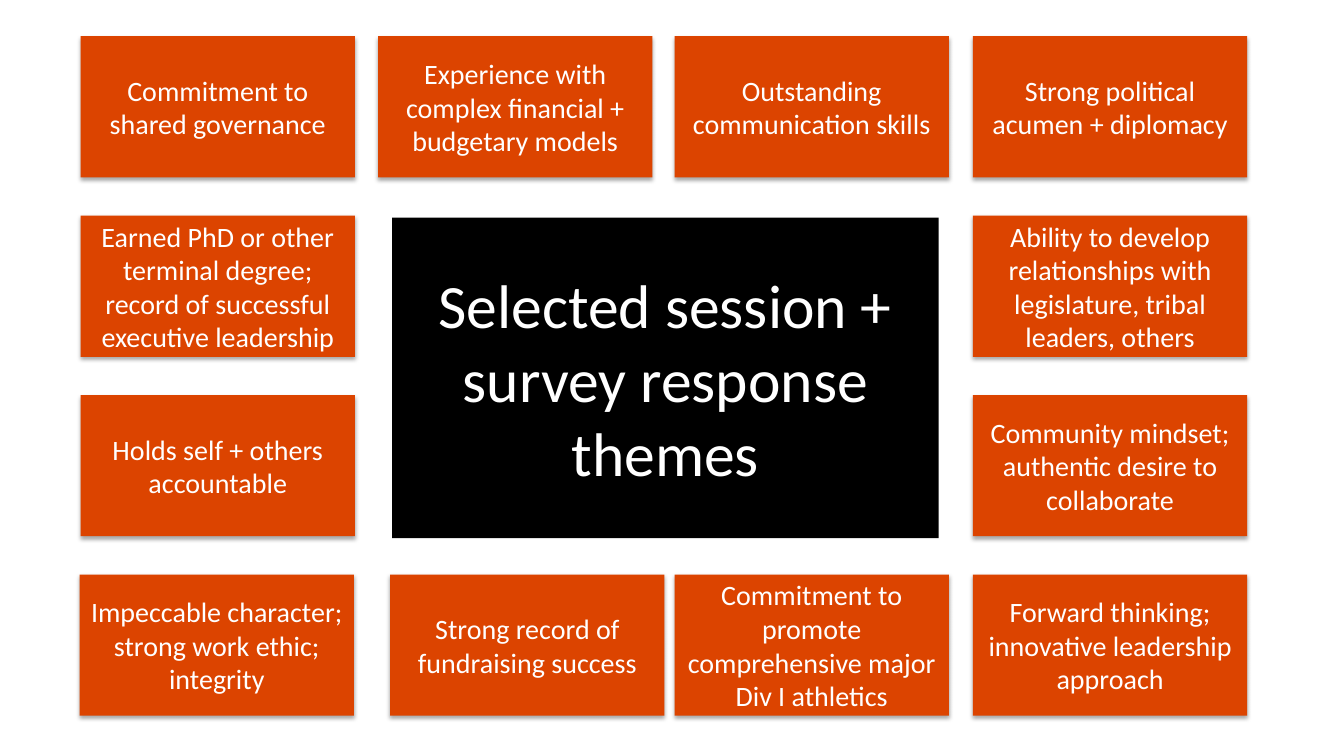
"""Build a slide of response themes framing a central title."""
from lxml.etree import SubElement
from pptx import Presentation
from pptx.dml.color import RGBColor
from pptx.enum.shapes import MSO_SHAPE
from pptx.enum.text import MSO_ANCHOR, MSO_AUTO_SIZE, PP_ALIGN
from pptx.oxml.ns import qn
from pptx.util import Pt

PX = 9144
ORANGE = RGBColor(0xDC, 0x44, 0x00)
BLACK = RGBColor(0x00, 0x00, 0x00)
WHITE = RGBColor(0xFF, 0xFF, 0xFF)

CARD_WIDTH, CARD_HEIGHT = 272, 140
FIRST_TOP, ROW_STEP = 36, 178
LEFT, RIGHT = 80, 965

THEME_ROWS = [
    [(LEFT, "Commitment to shared governance"),
     (375, "Experience with complex financial + budgetary models"),
     (669, "Outstanding communication skills"),
     (RIGHT, "Strong political acumen + diplomacy")],
    [(LEFT, "Earned PhD or other terminal degree; record of successful executive leadership"),
     (RIGHT, "Ability to develop relationships with legislature, tribal leaders, others")],
    [(LEFT, "Holds self + others accountable"),
     (RIGHT, "Community mindset; authentic desire to collaborate")],
    [(79, "Impeccable character; strong work ethic; integrity"),
     (387, "Strong record of fundraising success"),
     (669, "Commitment to promote comprehensive major Div I athletics"),
     (RIGHT, "Forward thinking; innovative leadership approach")],
]


def write_text(shape, text, *, size, fill, color=WHITE, font="Calibri"):
    shape.fill.solid()
    shape.fill.fore_color.rgb = fill
    shape.line.fill.background()
    frame = shape.text_frame
    frame.word_wrap = True
    frame.auto_size = MSO_AUTO_SIZE.NONE
    frame.vertical_anchor = MSO_ANCHOR.MIDDLE
    paragraph = frame.paragraphs[0]
    paragraph.alignment = PP_ALIGN.CENTER
    run = paragraph.add_run()
    run.text = text
    run.font.name = font
    run.font.size = Pt(size)
    run.font.color.rgb = color


def add_soft_shadow(shape):
    shape.shadow.inherit = False
    effects = shape._element.spPr.find(qn("a:effectLst"))
    shadow = SubElement(effects, qn("a:outerShdw"), blurRad=str(Pt(3.1)),
                        dist=str(Pt(1.8)), dir="5400000", rotWithShape="0")
    shadow_color = SubElement(shadow, qn("a:srgbClr"), val=str(BLACK))
    SubElement(shadow_color, qn("a:alpha"), val="35000")


presentation = Presentation()
presentation.slide_width = 1333 * PX
presentation.slide_height = 750 * PX
slide = presentation.slides.add_slide(presentation.slide_layouts[5])

title = slide.shapes.title
title.left, title.top = 389 * PX, 216 * PX
title.width, title.height = 542 * PX, 318 * PX
write_text(title, "Selected session + survey response themes", size=44, fill=BLACK)

for row, themes in enumerate(THEME_ROWS):
    top = FIRST_TOP + row * ROW_STEP
    for left, theme in themes:
        card = slide.shapes.add_shape(
            MSO_SHAPE.RECTANGLE, left * PX, top * PX, CARD_WIDTH * PX, CARD_HEIGHT * PX)
        write_text(card, theme, size=20, fill=ORANGE)
        add_soft_shadow(card)

presentation.save("out.pptx")
